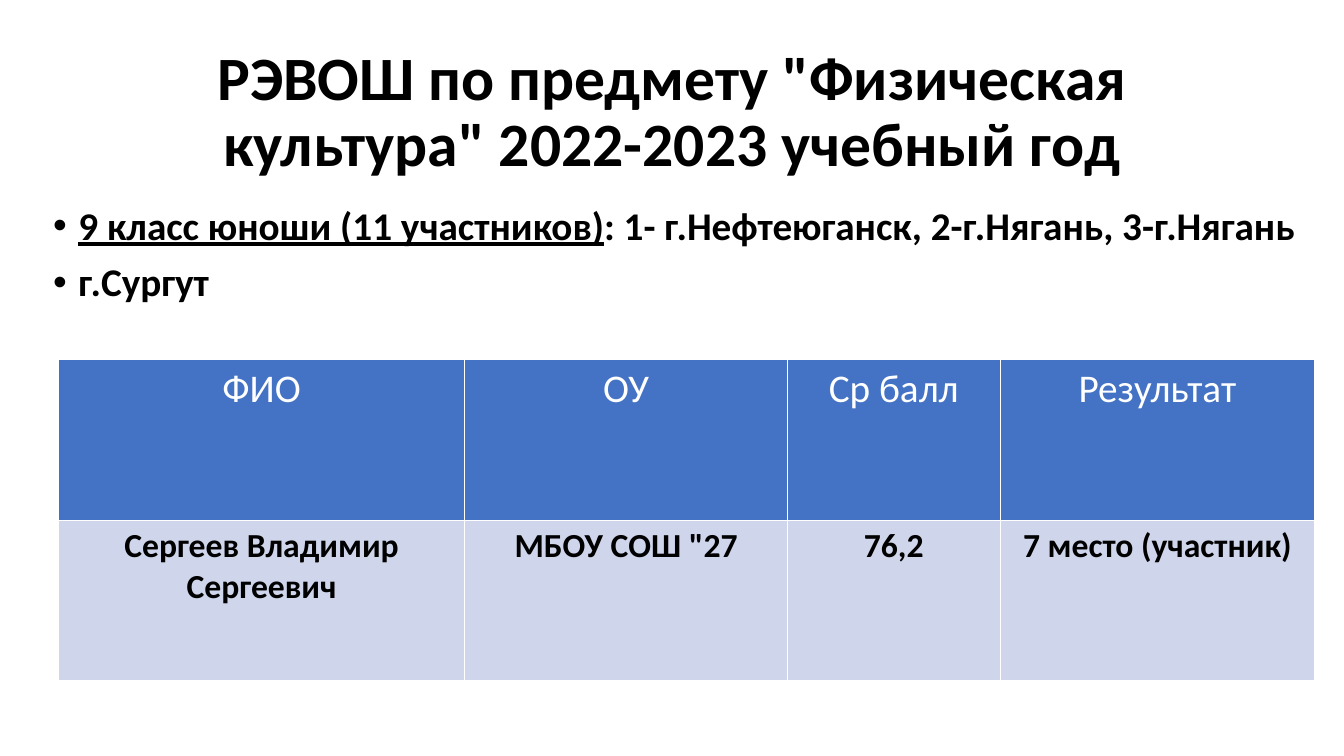
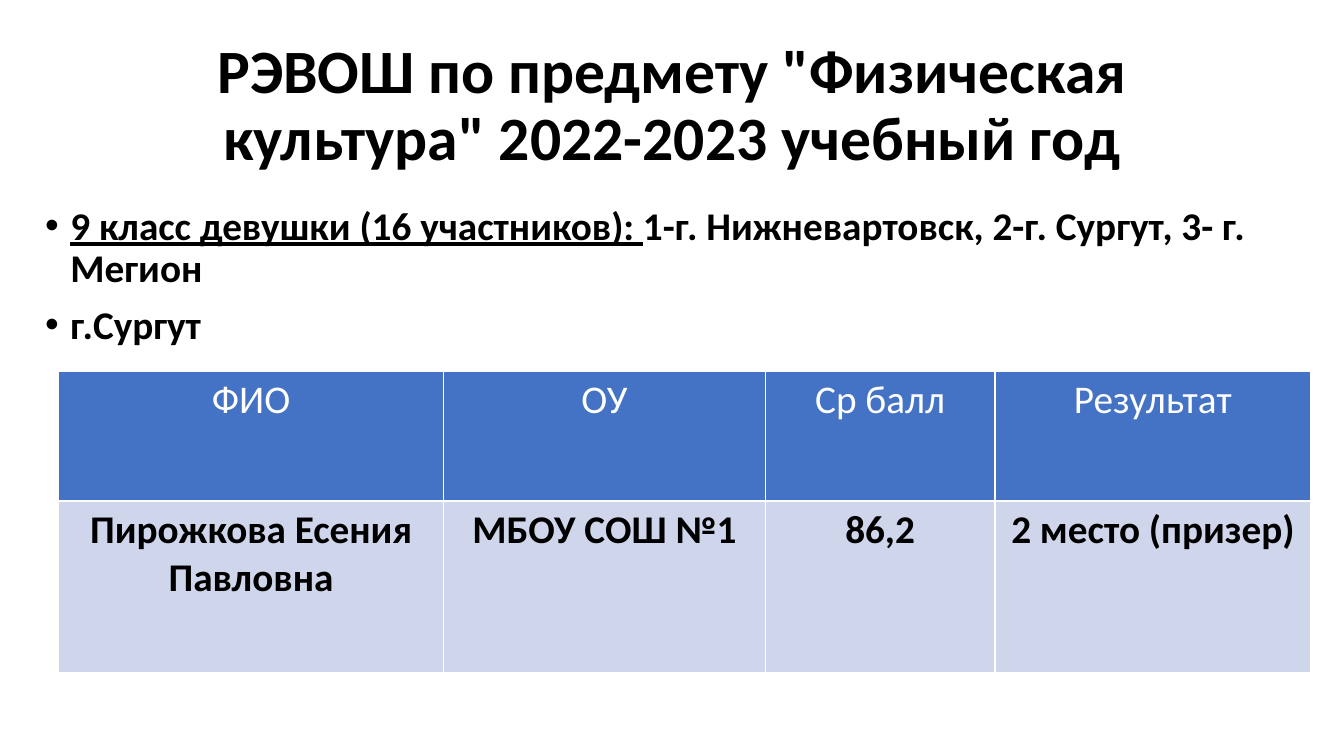
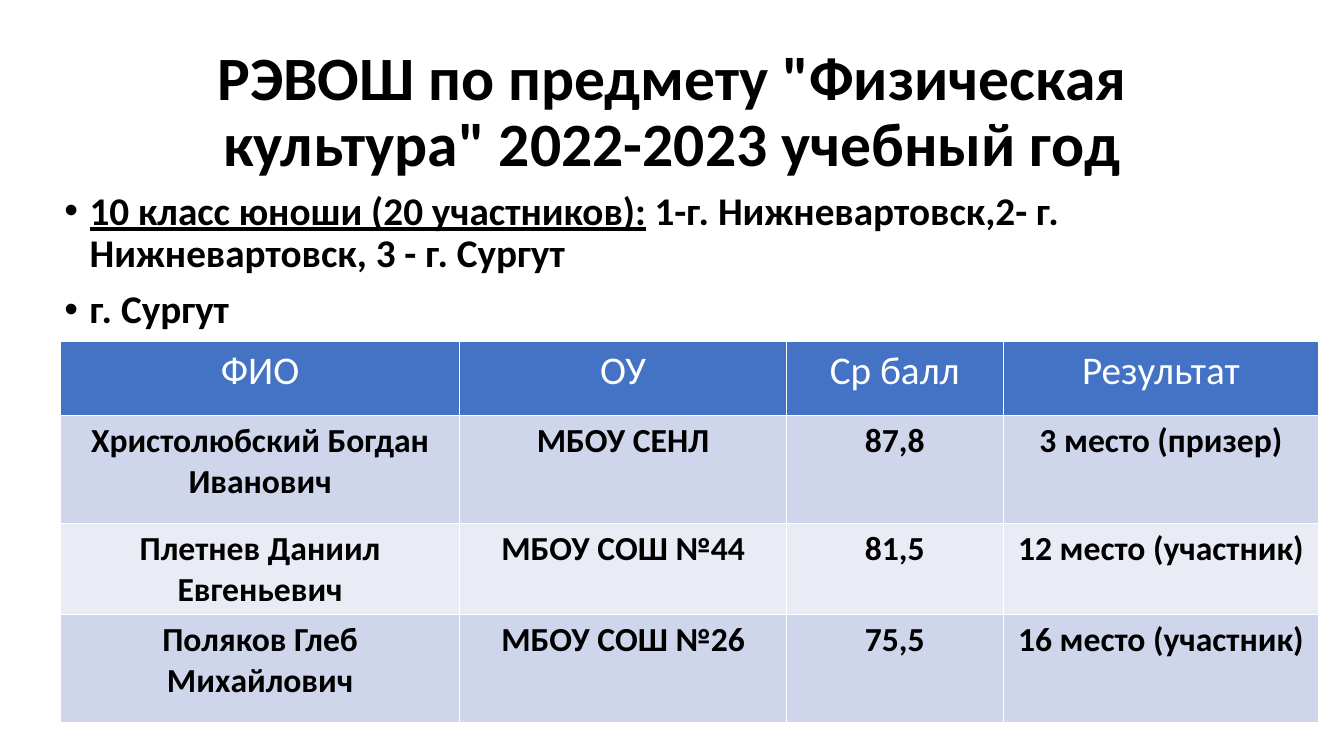
from lxml.etree import SubElement
from pptx import Presentation
from pptx.dml.color import RGBColor
from pptx.enum.text import MSO_ANCHOR, MSO_AUTO_SIZE, PP_ALIGN
from pptx.oxml.ns import qn
from pptx.util import Inches, Pt

FONT = "Calibri"
BLACK, WHITE = "000000", "FFFFFF"
HEADER_FILL = "4472C4"
BAND_FILLS = ("CFD5EA", "E9EBF5")
TITLE = 'РЭВОШ по предмету "Физическая культура" 2022-2023 учебный год'
HEADINGS = ("ФИО", "ОУ", "Ср балл", "Результат")

RESULTS = [
    {
        "title_box": (0.92, 0.4, 11.5, 1.45),
        "places_box": (0.43, 2, 12.76, 1.4),
        "group": "9 класс юноши (11 участников)",
        "winners": ": 1- г.Нефтеюганск, 2-г.Нягань, 3-г.Нягань",
        "city": "г.Сургут",
        "table_at": (0.58, 3.57),
        "columns": (4.03, 3.2, 2.11, 3.12),
        "rows": (1.59, 1.59),
        "size": 24,
        "pupils": [("Сергеев Владимир Сергеевич", 'МБОУ СОШ "27', "76,2", "7 место (участник)")],
    },
    {
        "title_box": (0.92, 0.24, 11.5, 1.64),
        "places_box": (0.35, 2, 12.81, 1.6),
        "group": "9 класс девушки (16 участников): ",
        "winners": "1-г. Нижневартовск, 2-г. Сургут, 3- г. Мегион",
        "city": "г.Сургут",
        "table_at": (0.58, 3.68),
        "columns": (3.82, 3.19, 2.28, 3.13),
        "rows": (1.29, 1.7),
        "size": 28,
        "pupils": [("Пирожкова Есения Павловна", "МБОУ СОШ №1", "86,2", "2 место (призер)")],
    },
    {
        "title_box": (0.92, 0.37, 11.5, 1.51),
        "places_box": (0.54, 1.85, 12.54, 1.5),
        "group": "10 класс юноши (20 участников):",
        "winners": " 1-г. Нижневартовск,2- г. Нижневартовск, 3 - г. Сургут",
        "city": "г. Сургут",
        "table_at": (0.6, 3.39),
        "columns": (3.96, 3.24, 2.15, 3.13),
        "rows": (0.73, 1.07, 0.91, 1.07),
        "size": 24,
        "pupils": [
            ("Христолюбский Богдан Иванович", "МБОУ СЕНЛ", "87,8", "3 место (призер)"),
            ("Плетнев Даниил Евгеньевич", "МБОУ СОШ №44", "81,5", "12 место (участник)"),
            ("Поляков Глеб Михайлович", "МБОУ СОШ №26", "75,5", "16 место (участник)"),
        ],
    },
]


def color(value):
    return RGBColor.from_string(value)


def add_run(paragraph, text, size, ink=BLACK, bold=True, underline=False):
    run = paragraph.add_run()
    run.text = text
    run.font.name = FONT
    run.font.size = Pt(size)
    run.font.bold = bold
    run.font.underline = underline
    run.font.color.rgb = color(ink)


def place_title(slide, box):
    title = slide.shapes.title
    title.left, title.top, title.width, title.height = map(Inches, box)
    frame = title.text_frame
    frame.word_wrap = True
    frame.auto_size = MSO_AUTO_SIZE.NONE
    frame.vertical_anchor = MSO_ANCHOR.MIDDLE
    heading = frame.paragraphs[0]
    heading.alignment = PP_ALIGN.CENTER
    heading.line_spacing = 0.9
    add_run(heading, TITLE, 44)


def set_bullet(paragraph):
    paragraph.line_spacing = 0.9
    paragraph.space_before = Pt(10)
    properties = paragraph._p.get_or_add_pPr()
    properties.set("marL", str(Inches(0.25)))
    properties.set("indent", str(-Inches(0.25)))
    SubElement(properties, qn("a:buFont")).set("typeface", "Arial")
    SubElement(properties, qn("a:buChar")).set("char", "•")


def add_places(slide, box, group, winners, city):
    frame = slide.shapes.add_textbox(*map(Inches, box)).text_frame
    frame.word_wrap = True
    placing = frame.paragraphs[0]
    set_bullet(placing)
    add_run(placing, group, 28, underline=True)
    add_run(placing, winners, 28)
    home = frame.add_paragraph()
    set_bullet(home)
    add_run(home, city, 28)


def set_borders(cell):
    properties = cell._tc.get_or_add_tcPr()
    for side in ("lnL", "lnR", "lnT", "lnB"):
        line = SubElement(properties, qn(f"a:{side}"), w=str(Pt(1)))
        fill = SubElement(line, qn("a:solidFill"))
        SubElement(fill, qn("a:srgbClr"), val=WHITE)


def fill_cell(cell, text, size, ink, bold, fill):
    set_borders(cell)
    cell.fill.solid()
    cell.fill.fore_color.rgb = color(fill)
    paragraph = cell.text_frame.paragraphs[0]
    paragraph.alignment = PP_ALIGN.CENTER
    add_run(paragraph, text, size, ink, bold)


def add_results(slide, position, columns, rows, pupils, size):
    box = (*position, sum(columns), sum(rows))
    table = slide.shapes.add_table(len(rows), len(columns), *map(Inches, box)).table
    for column, width in zip(table.columns, columns):
        column.width = Inches(width)
    for row, height in zip(table.rows, rows):
        row.height = Inches(height)
    for column, heading in enumerate(HEADINGS):
        fill_cell(table.cell(0, column), heading, 28, WHITE, False, HEADER_FILL)
    for index, pupil in enumerate(pupils):
        for column, value in enumerate(pupil):
            fill_cell(table.cell(index + 1, column), value, size, BLACK, True, BAND_FILLS[index % 2])


def add_result_slide(deck, result):
    slide = deck.slides.add_slide(deck.slide_layouts[5])
    place_title(slide, result["title_box"])
    add_places(slide, result["places_box"], result["group"], result["winners"], result["city"])
    add_results(slide, result["table_at"], result["columns"], result["rows"], result["pupils"], result["size"])


def main():
    deck = Presentation()
    deck.slide_width, deck.slide_height = Inches(13.33), Inches(7.5)
    for result in RESULTS:
        add_result_slide(deck, result)
    deck.save("out.pptx")


if __name__ == "__main__":
    main()
